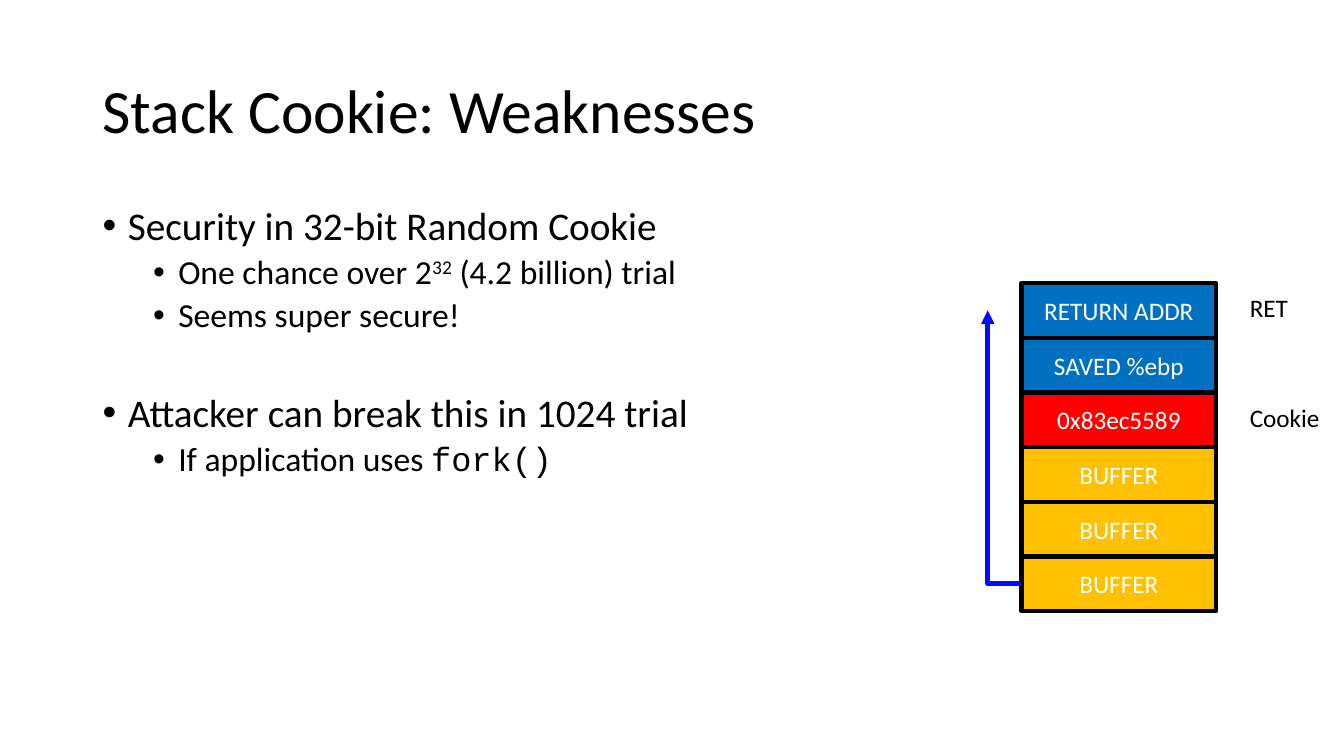
from dataclasses import dataclass
from lxml.etree import SubElement
from pptx import Presentation
from pptx.dml.color import RGBColor
from pptx.enum.shapes import MSO_CONNECTOR, MSO_SHAPE
from pptx.enum.text import MSO_ANCHOR, PP_ALIGN
from pptx.oxml.ns import qn
from pptx.util import Inches, Pt

TITLE = "Stack Cookie: Weaknesses"
BULLETS = [
    (0, 10, [("Security in 32-bit Random Cookie", {})]),
    (1, 5, [("One chance over 2", {}), ("32", {"baseline": 30}), (" (4.2 billion) trial", {})]),
    (1, 5, [("Seems super secure!", {})]),
    (0, 41.4, [("Attacker can break this in 1024 trial", {})]),
    (1, 5, [("If application uses ", {}), ("fork()", {"font": "Courier New"})]),
]
STACK = [
    ("RETURN ADDR", "control", "RET"),
    ("SAVED %ebp", "control", None),
    ("0x83ec5589", "cookie", "Cookie"),
    ("BUFFER", "buffer", None),
    ("BUFFER", "buffer", None),
    ("BUFFER", "buffer", None),
]


@dataclass(frozen=True)
class Theme:
    font: str = "Calibri"
    ink: str = "000000"
    light: str = "FFFFFF"
    control: str = "0070C0"
    cookie: str = "FF0000"
    buffer: str = "FFC000"
    arrow: str = "000CFF"
    title: int = 44
    levels: tuple = (28, 24)
    label: int = 18
    border: float = 3
    arrow_width: float = 3.25


T = Theme()
prs = Presentation()
prs.slide_width, prs.slide_height = Inches(13.33), Inches(7.5)
s = prs.slides.add_slide(prs.slide_layouts[6])


def x(percent):
    return int(prs.slide_width * percent / 100)


def y(percent):
    return int(prs.slide_height * percent / 100)


def add_run(p, text, *, size, color=T.ink, font=T.font, baseline=0):
    r = p.add_run()
    r.text = text
    r.font.size, r.font.name = Pt(size), font
    r.font.color.rgb = RGBColor.from_string(color)
    if baseline:
        r.font._element.set("baseline", str(baseline * 1000))


def text_box(left, top, width, height, *, wrap=True, anchor=MSO_ANCHOR.TOP):
    tf = s.shapes.add_textbox(x(left), y(top), x(width), y(height)).text_frame
    tf.word_wrap, tf.vertical_anchor = wrap, anchor
    return tf


def bullet(p, level):
    pPr = p._p.get_or_add_pPr()
    pPr.set("marL", str(Inches(0.25 + 0.5 * level)))
    pPr.set("indent", str(-Inches(0.25)))
    SubElement(pPr, qn("a:buFont")).set("typeface", "Arial")
    SubElement(pPr, qn("a:buChar")).set("char", "•")


LEFT, WIDTH = 6.9, 86.25
p = text_box(LEFT, 5.33, WIDTH, 19.33, anchor=MSO_ANCHOR.MIDDLE).paragraphs[0]
p.line_spacing = 0.9
add_run(p, TITLE, size=T.title)

tf = text_box(LEFT, 26.63, WIDTH, 63.45)
for i, (level, before, runs) in enumerate(BULLETS):
    p = tf.add_paragraph() if i else tf.paragraphs[0]
    p.level, p.line_spacing, p.space_before = level, 0.9, Pt(before)
    bullet(p, level)
    for text, fmt in runs:
        add_run(p, text, size=T.levels[level], **fmt)

CELL_X, CELL_W, STACK_Y, ROW = 76, 14.5, 37.45, 7.23
LABEL_X, LABEL_DROP, ARROW_X = 92.25, 0.6, 73.5
for i, (text, kind, label) in enumerate(STACK):
    top = STACK_Y + i * ROW
    sp = s.shapes.add_shape(MSO_SHAPE.RECTANGLE, x(CELL_X), y(top), x(CELL_W), y(ROW))
    sp.shadow.inherit = False
    sp.fill.solid()
    sp.fill.fore_color.rgb = RGBColor.from_string(getattr(T, kind))
    sp.line.color.rgb = RGBColor.from_string(T.ink)
    sp.line.width = Pt(T.border)
    sp.text_frame.vertical_anchor = MSO_ANCHOR.MIDDLE
    p = sp.text_frame.paragraphs[0]
    p.alignment = PP_ALIGN.CENTER
    add_run(p, text, size=T.label, color=T.light)
    if label:
        tf = text_box(LABEL_X, top + LABEL_DROP, 6.75, 5.33, wrap=False)
        add_run(tf.paragraphs[0], label, size=T.label)

first, last = (STACK_Y + (i + 0.5) * ROW for i in (0, len(STACK) - 1))
overflow = s.shapes.add_connector(MSO_CONNECTOR.ELBOW, x(CELL_X), y(last), x(ARROW_X), y(first))
overflow.line.color.rgb = RGBColor.from_string(T.arrow)
overflow.line.width = Pt(T.arrow_width)
spPr = overflow._element.spPr
spPr.find(qn("a:prstGeom")).set("prst", "bentConnector2")
SubElement(spPr.find(qn("a:ln")), qn("a:tailEnd")).set("type", "triangle")
SubElement(spPr, qn("a:effectLst"))

prs.save("out.pptx")
